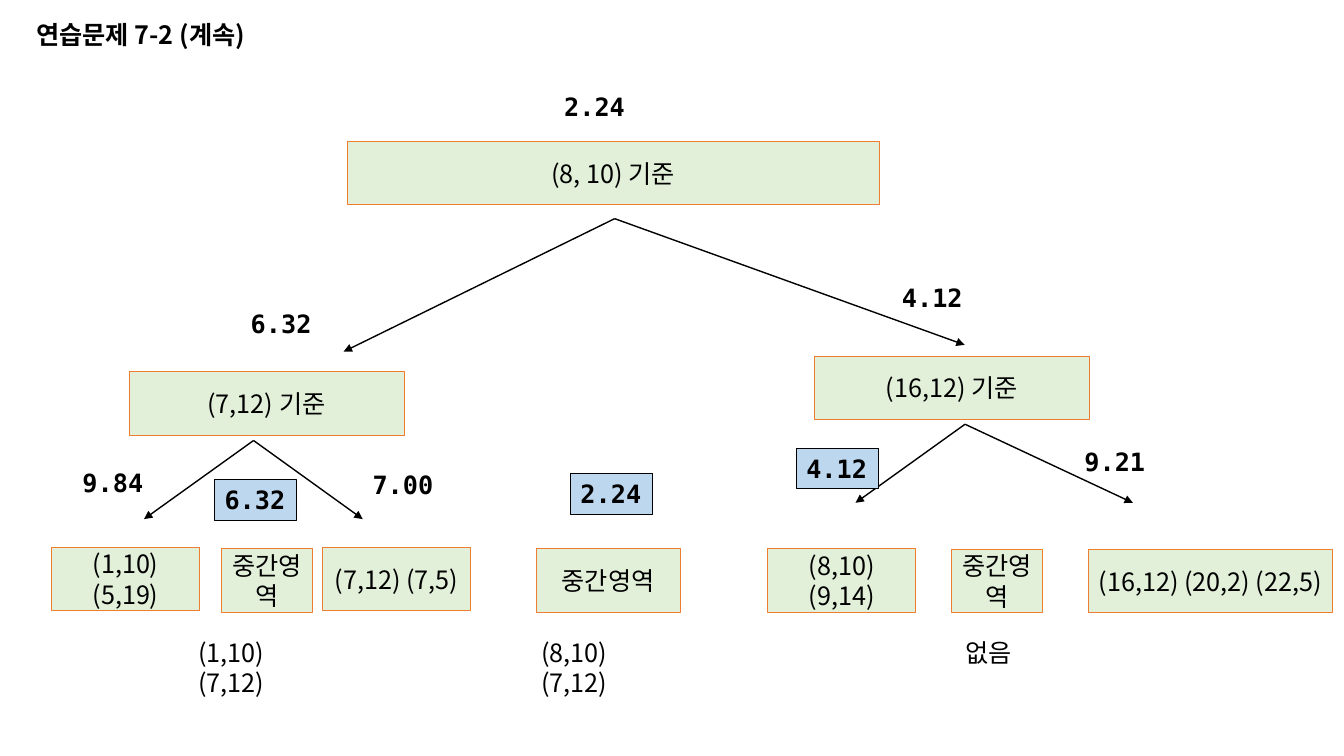
from dataclasses import dataclass

import pptx
import pptx.dml.color
import pptx.enum.shapes
import pptx.enum.text
import pptx.oxml.ns
import pptx.util
from lxml import etree

Cm = pptx.util.Cm
Pt = pptx.util.Pt
qn = pptx.oxml.ns.qn

COLORS = {
    "ink": "000000",
    "node_fill": "E2F0D9",
    "node_line": "ED7D31",
    "minimum_fill": "BDD7EE",
}
KOREAN_FONT = "Noto Sans CJK KR"
NUMBER_FONT = "DejaVu Sans Mono"
TEXT_SIZE = 18
NODE_HEIGHT = 1.6
LABEL_HEIGHT = 1.02
DISTANCE_WIDTH = 2.06


@dataclass
class Node:
    text: str
    left: float
    top: float
    width: float


@dataclass
class Branch:
    start: tuple[float, float]
    ends: list[tuple[float, float]]


@dataclass
class Distance:
    text: str
    left: float
    top: float
    is_minimum: bool = False


@dataclass
class Label:
    text: str
    left: float
    top: float
    width: float
    wrap: bool = True


NODES = [
    Node("(8, 10) 기준", 8.76, 3.56, 13.39),
    Node("(7,12) 기준", 3.25, 9.37, 6.93),
    Node("(16,12) 기준", 20.52, 8.97, 6.93),
    Node("(1,10) (5,19)", 1.3, 13.79, 3.73),
    Node("중간영역", 5.59, 13.82, 2.29),
    Node("(7,12) (7,5)", 8.13, 13.79, 3.73),
    Node("중간영역", 13.51, 13.82, 3.63),
    Node("(8,10) (9,14)", 19.35, 13.82, 3.73),
    Node("중간영역", 23.98, 13.84, 2.29),
    Node("(16,12) (20,2) (22,5)", 27.43, 13.84, 6.15),
]
BRANCHES = [
    Branch((15.49, 5.51), [(8.66, 8.86), (24.31, 8.69)]),
    Branch((6.39, 11.1), [(3.63, 13.08), (9.14, 13.08)]),
    Branch((24.32, 10.69), [(21.56, 12.67), (28.55, 12.67)]),
]
DISTANCES = [
    Distance("2.24", 13.97, 2.18),
    Distance("6.32", 6.07, 7.65),
    Distance("4.12", 22.48, 6.99),
    Distance("9.84", 1.83, 11.66),
    Distance("7.00", 9.14, 11.71),
    Distance("9.21", 27.08, 11.13),
    Distance("6.32", 5.41, 12.09, True),
    Distance("2.24", 14.38, 11.94, True),
    Distance("4.12", 20.07, 11.3, True),
]
MIDDLE_POINTS = [
    Label("(1,10)\v(7,12)", 4.75, 15.93, 3.91),
    Label("(8,10)\v(7,12)", 13.39, 15.93, 3.91),
    Label("없음", 24.08, 15.93, 1.8, wrap=False),
]
TITLE = Label("연습문제 7-2 (계속)", 0.41, 0.36, 6.27, wrap=False)


def color(name: str) -> pptx.dml.color.RGBColor:
    return pptx.dml.color.RGBColor.from_string(COLORS[name])


def write(shape, text: str, font_name: str, bold: bool = False,
          centered: bool = False) -> None:
    shape.text_frame.text = text
    align = pptx.enum.text.PP_ALIGN
    for paragraph in shape.text_frame.paragraphs:
        paragraph.alignment = align.CENTER if centered else align.LEFT
        for run in paragraph.runs:
            run.font.name = font_name
            run.font.size = Pt(TEXT_SIZE)
            run.font.bold = bold
            run.font.color.rgb = color("ink")
            # The East Asian typeface covers the Hangul characters
            east_asian = etree.SubElement(run.font._element, qn("a:ea"))
            east_asian.set("typeface", font_name)


def decorate(shape, fill: str, line: str, line_width: float) -> None:
    shape.fill.solid()
    shape.fill.fore_color.rgb = color(fill)
    shape.line.color.rgb = color(line)
    shape.line.width = Pt(line_width)


def add_node(slide, node: Node) -> None:
    shape = slide.shapes.add_shape(
        pptx.enum.shapes.MSO_SHAPE.RECTANGLE,
        Cm(node.left), Cm(node.top), Cm(node.width), Cm(NODE_HEIGHT))
    shape.shadow.inherit = False
    decorate(shape, "node_fill", "node_line", 0.5)
    shape.text_frame.word_wrap = True
    shape.text_frame.vertical_anchor = pptx.enum.text.MSO_ANCHOR.MIDDLE
    write(shape, node.text, KOREAN_FONT, centered=True)


def add_branch(slide, branch: Branch) -> None:
    start_x, start_y = branch.start
    for end_x, end_y in branch.ends:
        arrow = slide.shapes.add_connector(
            pptx.enum.shapes.MSO_CONNECTOR.STRAIGHT,
            Cm(start_x), Cm(start_y), Cm(end_x), Cm(end_y))
        arrow.line.color.rgb = color("ink")
        arrow.line.width = Pt(1)
        head = etree.SubElement(arrow.line._get_or_add_ln(), qn("a:tailEnd"))
        head.set("type", "triangle")
        etree.SubElement(arrow._element.spPr, qn("a:effectLst"))


def add_label(slide, label: Label, font_name: str, bold: bool = False,
              centered: bool = False):
    box = slide.shapes.add_textbox(
        Cm(label.left), Cm(label.top), Cm(label.width), Cm(LABEL_HEIGHT))
    box.text_frame.word_wrap = label.wrap
    box.text_frame.auto_size = pptx.enum.text.MSO_AUTO_SIZE.SHAPE_TO_FIT_TEXT
    write(box, label.text, font_name, bold, centered)
    return box


def add_distance(slide, distance: Distance) -> None:
    label = Label(distance.text, distance.left, distance.top,
                  DISTANCE_WIDTH, wrap=False)
    box = add_label(slide, label, NUMBER_FONT, bold=True)
    if distance.is_minimum:
        decorate(box, "minimum_fill", "ink", 0.75)


def main() -> None:
    presentation = pptx.Presentation()
    presentation.slide_width = Cm(33.87)
    presentation.slide_height = Cm(19.05)
    slide = presentation.slides.add_slide(presentation.slide_layouts[6])

    # Tree of split points
    for branch in BRANCHES:
        add_branch(slide, branch)
    for node in NODES:
        add_node(slide, node)

    # Closest distances and points of the middle areas
    for distance in DISTANCES:
        add_distance(slide, distance)
    for label in MIDDLE_POINTS:
        add_label(slide, label, KOREAN_FONT)

    # Title
    title = add_label(slide, TITLE, KOREAN_FONT, bold=True, centered=True)
    title.text_frame.paragraphs[0].space_after = Pt(8)

    presentation.save("out.pptx")


if __name__ == "__main__":
    main()
